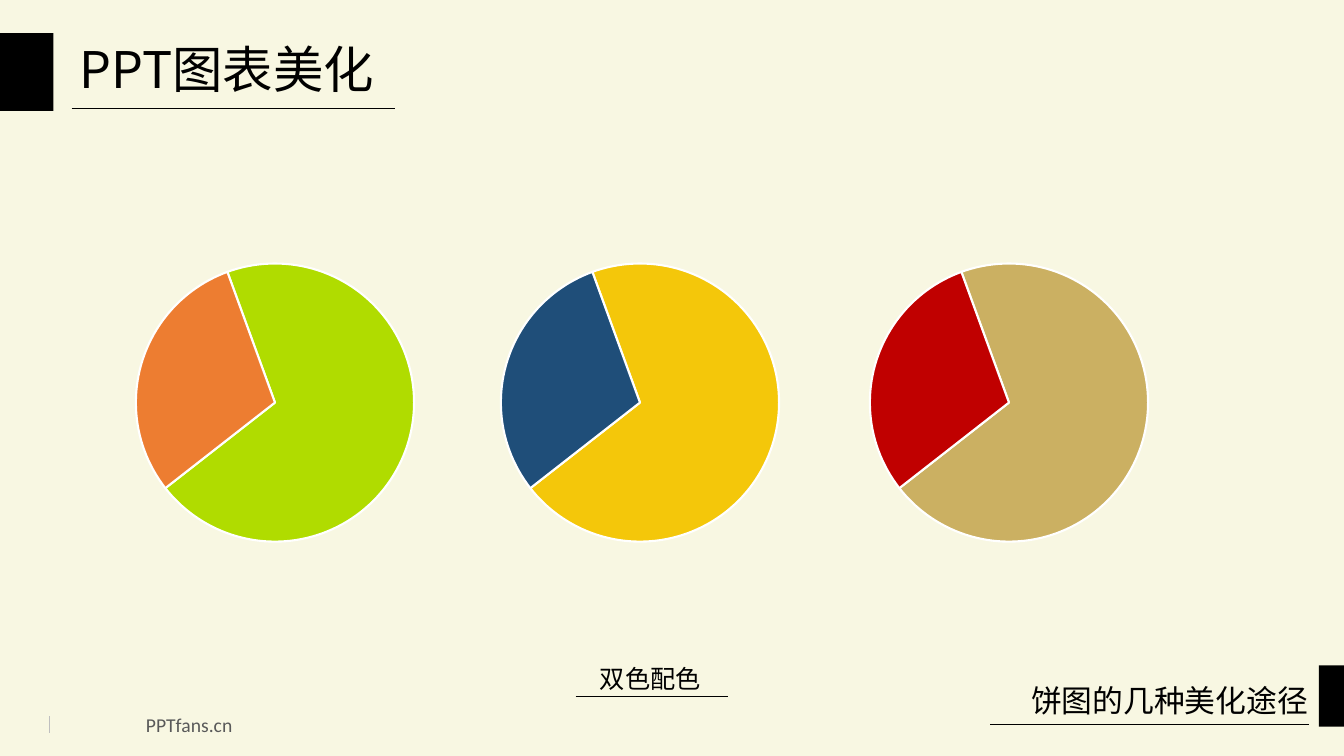
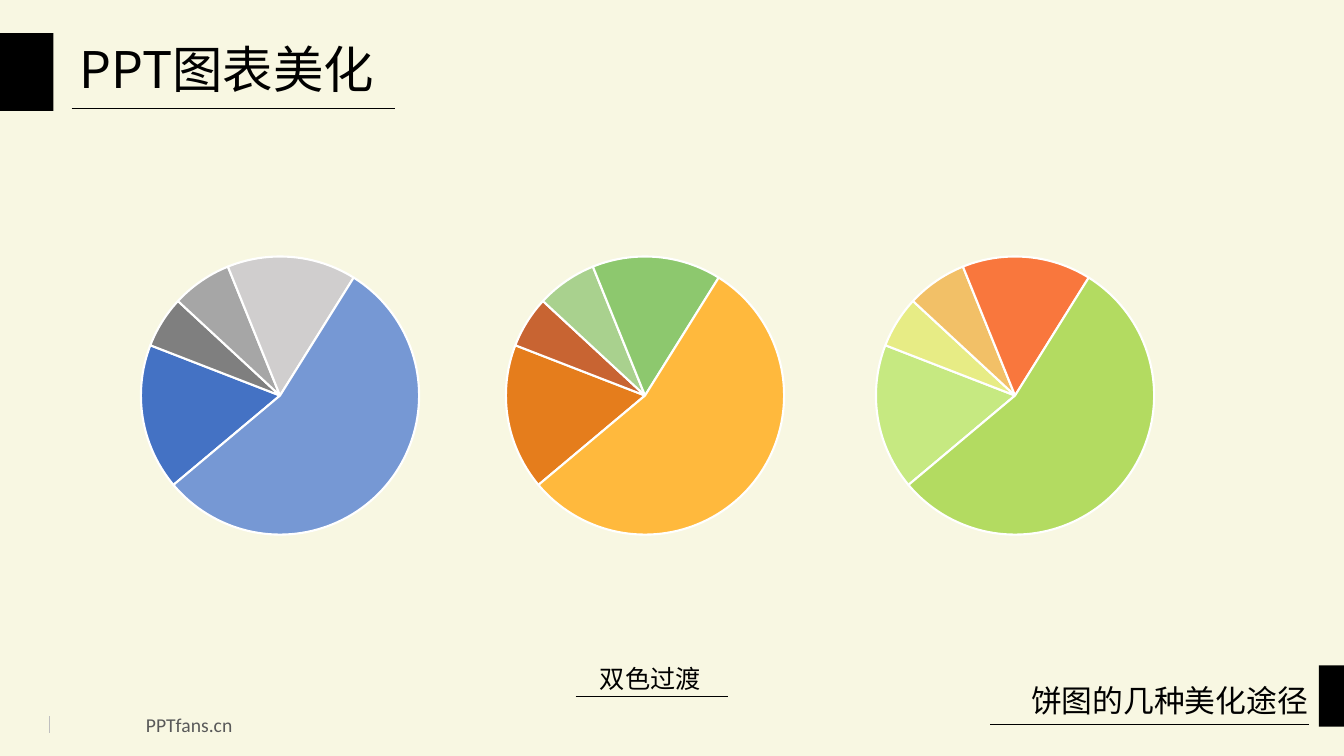
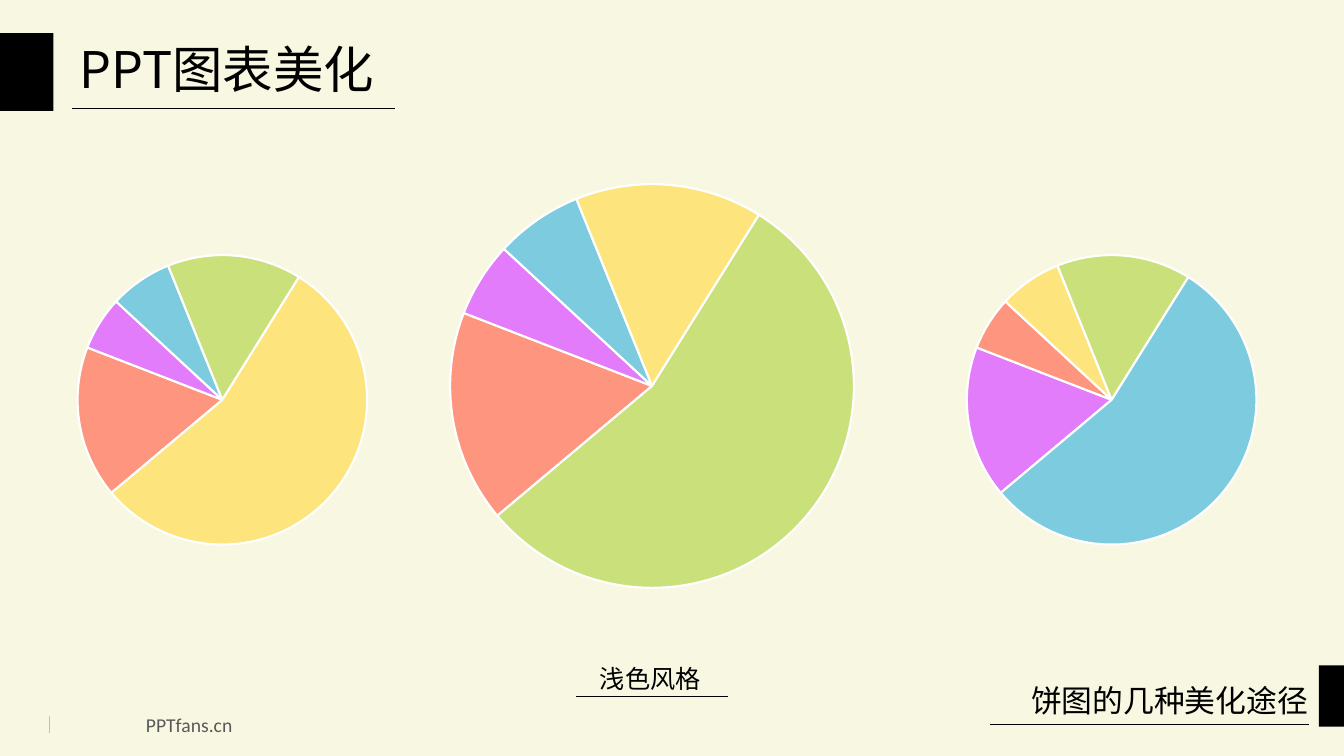
"""Build three slides of restyled pie charts."""
from lxml import etree
from pptx import Presentation
from pptx.chart.data import CategoryChartData
from pptx.dml.color import RGBColor
from pptx.enum import chart as charts, shapes, text
from pptx.oxml import parse_xml
from pptx.oxml.ns import nsdecls, qn
from pptx.util import Inches, Pt

CREAM = RGBColor(0xF8, 0xF7, 0xE2)
BLACK = RGBColor(0, 0, 0)
WHITE = RGBColor(0xFF, 0xFF, 0xFF)
SILVER = RGBColor(0xBF, 0xBF, 0xBF)
SLATE = RGBColor(0x59, 0x59, 0x59)
LIME, ORANGE = RGBColor(0xB0, 0xDC, 0x00), RGBColor(0xED, 0x7D, 0x31)
GOLD, NAVY = RGBColor(0xF4, 0xC7, 0x0A), RGBColor(0x1F, 0x4E, 0x79)
SAND, RED = RGBColor(0xCB, 0xB0, 0x62), RGBColor(0xC0, 0x00, 0x00)
BLUE, SKY = RGBColor(0x44, 0x72, 0xC4), RGBColor(0x76, 0x98, 0xD4)
GREY_DARK, GREY, GREY_LIGHT = (
    RGBColor(0x7F, 0x7F, 0x7F), RGBColor(0xA6, 0xA6, 0xA6), RGBColor(0xD0, 0xCE, 0xCE))
PUMPKIN, RUST, AMBER = (
    RGBColor(0xE5, 0x7D, 0x1C), RGBColor(0xC8, 0x64, 0x32), RGBColor(0xFF, 0xB9, 0x3D))
SAGE, LEAF = RGBColor(0xA9, 0xD1, 0x8E), RGBColor(0x8D, 0xC8, 0x6E)
MINT, LEMON, GRASS = (
    RGBColor(0xC6, 0xE9, 0x81), RGBColor(0xE7, 0xEC, 0x85), RGBColor(0xB3, 0xDB, 0x61))
APRICOT, TANGERINE = RGBColor(0xF2, 0xC0, 0x67), RGBColor(0xF9, 0x77, 0x3D)
SALMON, VIOLET, AQUA = (
    RGBColor(0xFE, 0x95, 0x7F), RGBColor(0xE3, 0x7C, 0xFA), RGBColor(0x7D, 0xCB, 0xDF))
BUTTER, PISTACHIO = RGBColor(0xFD, 0xE4, 0x7D), RGBColor(0xCA, 0xE0, 0x7B)

HAN = "Noto Sans CJK SC"
LATIN = "Calibri"
TITLE = "PPT图表美化"
TOPIC = "饼图的几种美化途径"
SITE = "PPTfans.cn"
PLOT_AREA = {"x": 0.12, "y": 0.11, "w": 0.73, "h": 0.75}

TWO_PARTS = ((70, 30), 340)
FIVE_PARTS = ((17, 6, 7, 15, 55), 230)
SMALL, MEDIUM, LARGE = (3.81, 3.68), (3.97, 3.83), (5.54, 5.34)

SLIDES = [
    ("双色配色", TWO_PARTS, [
        (0.88, 2.21, SMALL, (LIME, ORANGE)),
        (4.5, 2.21, SMALL, (GOLD, NAVY)),
        (8.16, 2.21, SMALL, (SAND, RED))]),
    ("双色过渡", FIVE_PARTS, [
        (0.93, 2.14, SMALL, (BLUE, GREY_DARK, GREY, GREY_LIGHT, SKY)),
        (4.55, 2.14, SMALL, (PUMPKIN, RUST, SAGE, LEAF, AMBER)),
        (8.22, 2.14, SMALL, (MINT, LEMON, APRICOT, TANGERINE, GRASS))]),
    ("浅色风格", FIVE_PARTS, [
        (0.28, 2.11, MEDIUM, (SALMON, VIOLET, AQUA, PISTACHIO, BUTTER)),
        (3.78, 1.24, LARGE, (SALMON, VIOLET, AQUA, BUTTER, PISTACHIO)),
        (9.1, 2.11, MEDIUM, (VIOLET, SALMON, BUTTER, PISTACHIO, AQUA))]),
]


class Deck:
    """Hold the shared style and the current slide."""

    def __init__(self):
        self.prs = Presentation()
        self.prs.slide_width, self.prs.slide_height = Inches(13.33), Inches(7.5)
        backdrop = self.prs.slide_master.background.fill
        backdrop.solid()
        backdrop.fore_color.rgb = CREAM
        self.slide = None

    def new_slide(self, caption):
        """Add a slide with its title, bands, footer and caption."""
        self.slide = self.prs.slides.add_slide(self.prs.slide_layouts[5])
        self.title(TITLE)
        self.line(0.71, 1.08, 3.92, 1.08)
        self.band(0, 0.33, 0.53, 0.77)
        self.band(13.08, 6.6, 0.25, 0.61)
        self.line(9.82, 7.19, 12.98, 7.19)
        self.line(0.49, 7.27, 0.49, 7.1, SILVER, 0.75)
        self.label(SITE, (1.35, 7.02, 1.07, 0.34), 14, LATIN, SLATE, wrap=False)
        self.label(TOPIC, (9.7, 6.71, 3.37, 0.47), 22, align=text.PP_ALIGN.RIGHT)
        self.label(caption, (5.48, 6.53, 1.94, 0.4), 18, align=text.PP_ALIGN.CENTER)
        self.line(5.71, 6.91, 7.22, 6.91)

    def fill_text(self, frame, words, size, font, color, align, wrap=True):
        """Fill a text frame with one styled paragraph."""
        frame.text = words
        frame.word_wrap = wrap
        frame.auto_size = text.MSO_AUTO_SIZE.NONE
        frame.vertical_anchor = text.MSO_ANCHOR.TOP
        line = frame.paragraphs[0]
        line.alignment = align
        line.font.size = Pt(size)
        line.font.color.rgb = color
        line.font.name = font
        defaults = line._p.pPr.find(qn("a:defRPr"))
        etree.SubElement(defaults, qn("a:ea")).set("typeface", font)

    def title(self, words):
        """Place and format the title placeholder."""
        heading = self.slide.shapes.title
        heading.left, heading.top = Inches(0.69), Inches(0.33)
        heading.width, heading.height = Inches(5.35), Inches(0.71)
        self.fill_text(heading.text_frame, words, 36, HAN, BLACK, text.PP_ALIGN.LEFT)

    def label(self, words, place, size, font=HAN, color=BLACK,
              align=text.PP_ALIGN.LEFT, wrap=True):
        """Add a text box."""
        box = self.slide.shapes.add_textbox(*map(Inches, place))
        self.fill_text(box.text_frame, words, size, font, color, align, wrap)

    def band(self, *place):
        """Add a plain black rectangle."""
        block = self.slide.shapes.add_shape(
            shapes.MSO_SHAPE.RECTANGLE, *map(Inches, place))
        block.shadow.inherit = False
        block.fill.solid()
        block.fill.fore_color.rgb = BLACK
        block.line.fill.background()

    def line(self, x1, y1, x2, y2, color=BLACK, weight=0.5):
        """Add a thin straight line."""
        rule = self.slide.shapes.add_connector(
            shapes.MSO_CONNECTOR.STRAIGHT, *map(Inches, (x1, y1, x2, y2)))
        rule.line.color.rgb = color
        rule.line.width = Pt(weight)
        etree.SubElement(rule._element.spPr, qn("a:effectLst"))

    def pie(self, left, top, size, values, start, colors):
        """Add a pie chart with one colour per slice."""
        shares = CategoryChartData()
        shares.categories = [str(n + 1) for n in range(len(values))]
        shares.add_series("Series 1", values)
        chart = self.slide.shapes.add_chart(
            charts.XL_CHART_TYPE.PIE, *map(Inches, (left, top, *size)), shares).chart
        chart.has_legend = False
        chart.has_title = False
        chart.font.size = Pt(18)
        chart.font.name = LATIN
        chart.font.color.rgb = BLACK
        plot = chart.plots[0]
        plot.vary_by_categories = True
        for index, color in enumerate(colors):
            wedge = plot.series[0].points[index].format
            wedge.fill.solid()
            wedge.fill.fore_color.rgb = color
            wedge.line.color.rgb = WHITE
            wedge.line.width = Pt(1.5)
        self.arrange(chart, start)

    def arrange(self, chart, start):
        """Set the first slice angle, plot position and clear background."""
        space = chart._chartSpace
        area = space.find(".//" + qn("c:plotArea"))
        pie = area.find(qn("c:pieChart"))
        etree.SubElement(pie, qn("c:firstSliceAng")).set("val", str(start))
        for automatic in area.findall(qn("c:layout")):
            area.remove(automatic)
        settings = {"layoutTarget": "inner", "xMode": "edge", "yMode": "edge", **PLOT_AREA}
        layout = etree.Element(qn("c:layout"))
        manual = etree.SubElement(layout, qn("c:manualLayout"))
        for name, value in settings.items():
            etree.SubElement(manual, qn("c:" + name)).set("val", str(value))
        area.insert(0, layout)
        space.find(qn("c:chart")).addnext(parse_xml(
            f'<c:spPr {nsdecls("c", "a")}><a:noFill/><a:ln><a:noFill/></a:ln></c:spPr>'))


def main():
    """Build and save the deck."""
    deck = Deck()
    for caption, (values, start), pies in SLIDES:
        deck.new_slide(caption)
        for left, top, size, colors in pies:
            deck.pie(left, top, size, values, start, colors)
    deck.prs.save("out.pptx")


if __name__ == "__main__":
    main()
